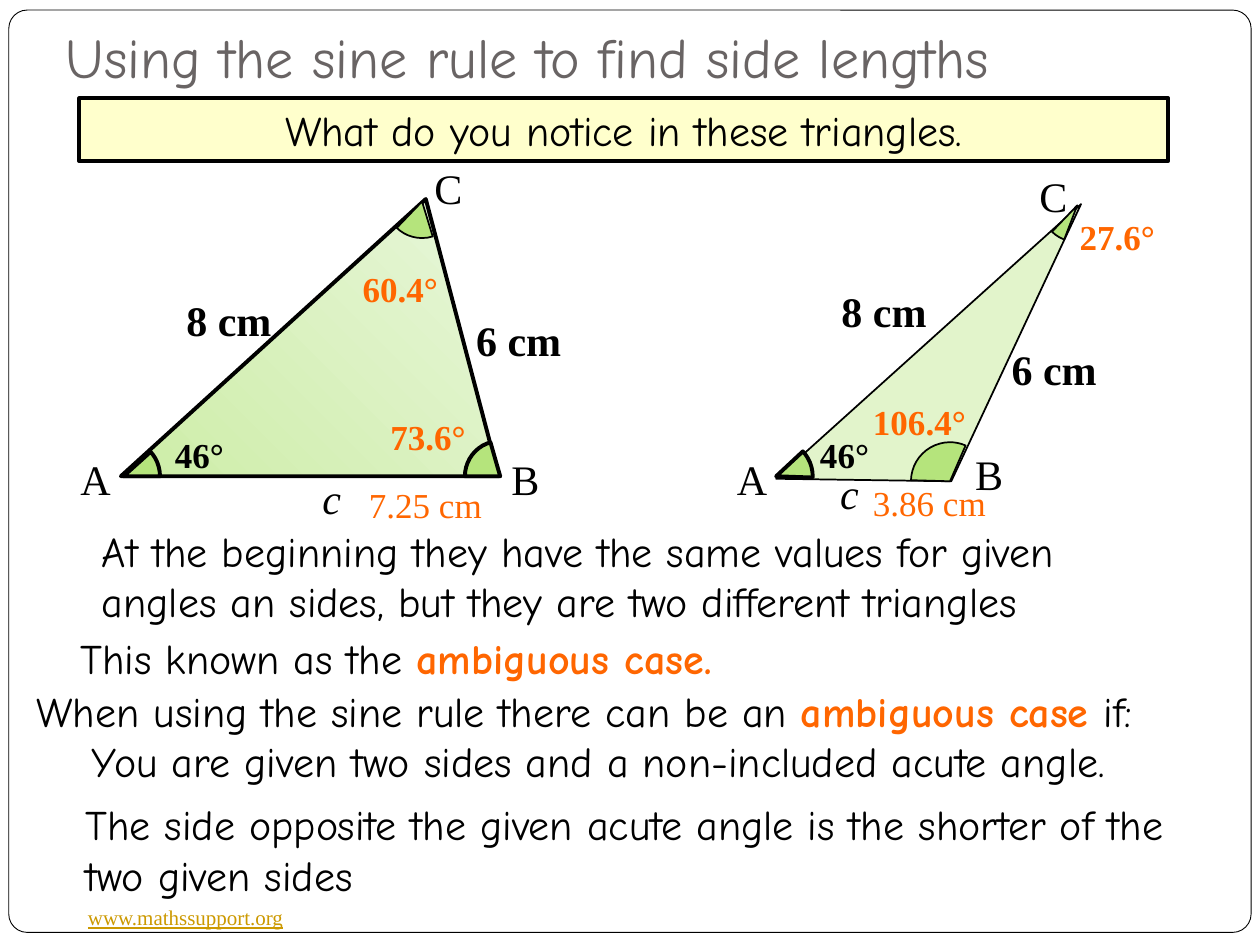
from dataclasses import dataclass, field

import pptx
import pptx.dml.color
import pptx.enum.shapes
import pptx.enum.text
import pptx.util

Inches = pptx.util.Inches
RGBColor = pptx.dml.color.RGBColor
Shape = pptx.enum.shapes.MSO_SHAPE
Align = pptx.enum.text.PP_ALIGN
Anchor = pptx.enum.text.MSO_ANCHOR

BLACK = RGBColor(0x00, 0x00, 0x00)
WHITE = RGBColor(0xFF, 0xFF, 0xFF)
GREY = RGBColor(0x69, 0x64, 0x64)
ORANGE = RGBColor(0xFF, 0x66, 0x00)
GOLD = RGBColor(0xCC, 0x99, 0x00)
CREAM = RGBColor(0xFF, 0xFF, 0xCC)
ANGLE_GREEN = RGBColor(0xB5, 0xE4, 0x7C)
PALE_GREEN = RGBColor(0xE2, 0xF4, 0xCB)
GRADIENT_GREENS = (RGBColor(0xCD, 0xED, 0xA7), RGBColor(0xE8, 0xF6, 0xDA))

SERIF = "Times New Roman"
ROUNDED = "Comic Neue"
BODY = {"name": ROUNDED, "size": pptx.util.Pt(24)}
BODY_BOLD = {**BODY, "bold": True}
VERTEX = {"name": SERIF, "size": pptx.util.Pt(24)}
SIDE = {**VERTEX, "bold": True}
UNKNOWN = {**VERTEX, "italic": True}
LENGTH = {"name": SERIF, "size": pptx.util.Pt(20)}
ANGLE = {**LENGTH, "bold": True}
ADDRESS = {"name": SERIF, "size": pptx.util.Pt(12), "underline": True}
TITLE = {"name": ROUNDED, "size": pptx.util.Pt(32)}


@dataclass
class Run:
    text: str
    style: dict = field(default_factory=lambda: BODY)
    color: RGBColor = BLACK


@dataclass
class Label:
    run: Run
    box: tuple[float, float, float, float]


@dataclass
class AngleMark:
    """A sector given in inches and in clockwise degrees from the right."""
    center: tuple[float, float]
    radius: float
    start: float
    end: float
    line_width: float


@dataclass
class Triangle:
    corners: list[tuple[float, float]]
    fills: tuple[RGBColor, ...]
    line_width: float
    marks: list[AngleMark]
    labels: list[Label]


TRIANGLES = [
    Triangle(
        [(0.96, 3.78), (3.96, 3.78), (3.38, 1.58)], GRADIENT_GREENS, 2.25,
        [AngleMark((0.98, 3.78), 0.29, 318, 360, 2.25),
         AngleMark((3.97, 3.78), 0.28, 180, 254, 2.25),
         AngleMark((3.35, 1.6), 0.29, 73, 133.8, 1)],
        [Label(Run("A", VERTEX), (0.54, 3.55, 0.45, 0.48)),
         Label(Run("B", VERTEX), (3.96, 3.55, 0.42, 0.47)),
         Label(Run("C", VERTEX), (3.35, 1.24, 0.4, 0.48)),
         Label(Run("8 cm", SIDE), (1.38, 2.29, 0.99, 0.48)),
         Label(Run("6 cm", SIDE), (3.68, 2.45, 0.99, 0.48)),
         Label(Run("c", UNKNOWN), (2.46, 3.7, 0.35, 0.5)),
         Label(Run("46°", ANGLE), (1.29, 3.39, 0.66, 0.41)),
         Label(Run("60.4°", ANGLE, ORANGE), (2.78, 2.07, 0.95, 0.44)),
         Label(Run("73.6°", ANGLE, ORANGE), (3, 3.25, 0.95, 0.44)),
         Label(Run("7.25 cm", LENGTH, ORANGE), (2.83, 3.79, 1.23, 0.44))]),
    Triangle(
        [(6.16, 3.8), (7.55, 3.82), (8.58, 1.62)], (PALE_GREEN,), 1,
        [AngleMark((6.16, 3.78), 0.29, 317, 2, 2.25),
         AngleMark((7.54, 3.82), 0.31, 181.6, 293.5, 1),
         AngleMark((8.55, 1.63), 0.29, 110.9, 133.8, 1)],
        [Label(Run("A", VERTEX), (5.75, 3.55, 0.45, 0.51)),
         Label(Run("B", VERTEX), (7.64, 3.51, 0.42, 0.5)),
         Label(Run("C", VERTEX), (8.15, 1.3, 0.4, 0.51)),
         Label(Run("8 cm", SIDE), (6.58, 2.22, 0.99, 0.51)),
         Label(Run("6 cm", SIDE), (7.93, 2.68, 0.99, 0.51)),
         Label(Run("c", UNKNOWN), (6.57, 3.66, 0.35, 0.5)),
         Label(Run("46°", ANGLE), (6.41, 3.39, 0.66, 0.44)),
         Label(Run("27.6°", ANGLE, ORANGE), (8.47, 1.66, 0.95, 0.44)),
         Label(Run("106.4°", ANGLE, ORANGE), (6.83, 3.13, 1.12, 0.44)),
         Label(Run("3.86 cm", LENGTH, ORANGE), (6.83, 3.77, 1.23, 0.44))]),
]

STATEMENTS = [
    ((0.71, 4.12, 8.69, 0.91),
     [Run("At the beginning they have the same values for given angles an sides, "
          "but they are two different triangles")]),
    ((0.54, 4.97, 8.97, 0.5),
     [Run("This known as the "), Run("ambiguous case.", BODY_BOLD, ORANGE)]),
    ((0.19, 5.39, 9.69, 0.5),
     [Run("When using the sine rule there can be an "),
      Run("ambiguous case ", BODY_BOLD, ORANGE), Run("if:")]),
    ((0.63, 5.79, 9.1, 0.5),
     [Run("You are given two sides and a non-included acute angle.")]),
    ((0.58, 6.29, 9.1, 0.91),
     [Run("The side opposite the given acute angle is the shorter of the two given sides")]),
]


def write_runs(paragraph, runs: list[Run], alignment=Align.LEFT) -> None:
    paragraph.alignment = alignment
    for item in runs:
        run = paragraph.add_run()
        run.text = item.text
        for name, value in item.style.items():
            setattr(run.font, name, value)
        run.font.color.rgb = item.color


def add_text(slide, box: tuple, runs: list[Run], wrap: bool = True) -> None:
    frame = slide.shapes.add_textbox(*map(Inches, box)).text_frame
    frame.word_wrap = wrap
    frame.auto_size = pptx.enum.text.MSO_AUTO_SIZE.SHAPE_TO_FIT_TEXT
    write_runs(frame.paragraphs[0], runs)


def paint(shape, fills: tuple[RGBColor, ...], line_width: float) -> None:
    """Fill with one colour, or with a gradient rising to the right for two."""
    shape.shadow.inherit = False
    if len(fills) == 1:
        shape.fill.solid()
        shape.fill.fore_color.rgb = fills[0]
    else:
        shape.fill.gradient()
        shape.fill.gradient_angle = 45
        for position, (stop, color) in enumerate(zip(shape.fill.gradient_stops, fills)):
            stop.position = position
            stop.color.rgb = color
    shape.line.color.rgb = BLACK
    shape.line.width = pptx.util.Pt(line_width)


def add_preset(slide, kind, box: tuple, fill: RGBColor, line_width: float):
    shape = slide.shapes.add_shape(kind, *map(Inches, box))
    paint(shape, (fill,), line_width)
    return shape


def add_angle_mark(slide, mark: AngleMark) -> None:
    left, top = (middle - mark.radius for middle in mark.center)
    box = (left, top, 2 * mark.radius, 2 * mark.radius)
    pie = add_preset(slide, Shape.PIE, box, ANGLE_GREEN, mark.line_width)
    # Angles are stored in 60000ths of a degree, adjustments in 100000ths.
    for index, degrees in enumerate((mark.start, mark.end)):
        pie.adjustments[index] = degrees * 0.6


def add_triangle(slide, triangle: Triangle) -> None:
    start, *others = [tuple(map(Inches, corner)) for corner in triangle.corners]
    builder = slide.shapes.build_freeform(*start)
    builder.add_line_segments(others, close=True)
    paint(builder.convert_to_shape(), triangle.fills, triangle.line_width)
    for mark in triangle.marks:
        add_angle_mark(slide, mark)
    for label in triangle.labels:
        add_text(slide, label.box, [label.run], wrap=False)


def add_title(slide, text: str) -> None:
    title = slide.shapes.title
    title.left, title.top, title.width, title.height = map(Inches, (0.42, 0.18, 9, 0.63))
    frame = title.text_frame
    settings = {"vertical_anchor": Anchor.BOTTOM, "word_wrap": True,
                "margin_bottom": Inches(0.1),
                "auto_size": pptx.enum.text.MSO_AUTO_SIZE.NONE}
    for name, value in settings.items():
        setattr(frame, name, value)
    write_runs(frame.paragraphs[0], [Run(text, TITLE, GREY)])


def main() -> None:
    presentation = pptx.Presentation()
    presentation.slide_width, presentation.slide_height = Inches(10), Inches(7.5)
    slide = presentation.slides.add_slide(presentation.slide_layouts[5])

    border = add_preset(slide, Shape.ROUNDED_RECTANGLE, (0.07, 0.08, 9.86, 7.32), WHITE, 0.5)
    border.adjustments[0] = 0.02
    slide.shapes._spTree.insert(2, border._element)  # behind the title
    add_title(slide, "Using the sine rule to find side lengths")
    add_text(slide, (0.6, 7.13, 1.77, 0.3),
             [Run("www.mathssupport.org", ADDRESS, GOLD)], wrap=False)

    question = add_preset(slide, Shape.RECTANGLE, (0.63, 0.78, 8.64, 0.5), CREAM, 2.25)
    write_runs(question.text_frame.paragraphs[0],
               [Run("What do you notice in these triangles.")], Align.CENTER)

    for triangle in TRIANGLES:
        add_triangle(slide, triangle)
    for box, runs in STATEMENTS:
        add_text(slide, box, runs)
    presentation.save("out.pptx")


if __name__ == "__main__":
    main()
